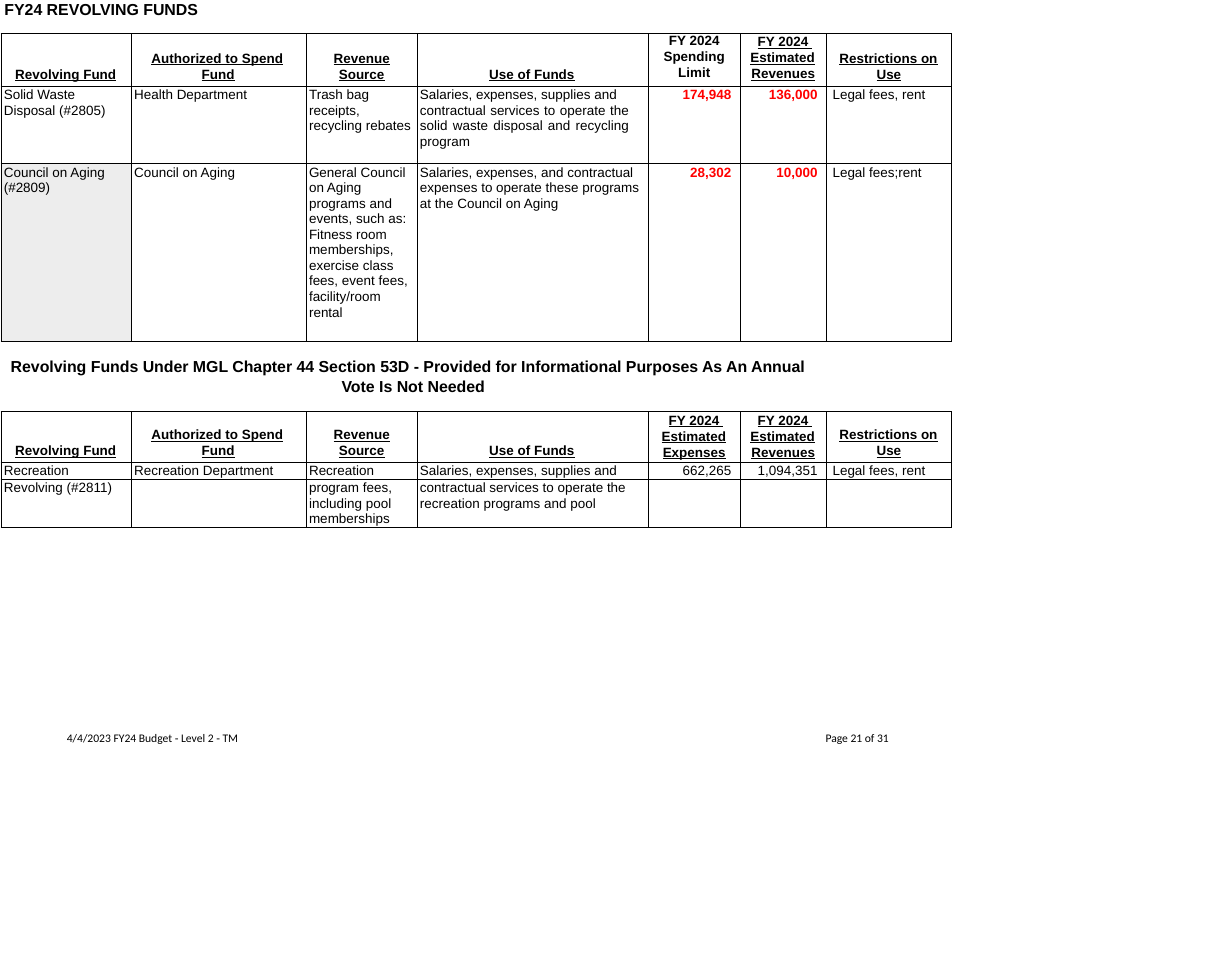
from dataclasses import dataclass, replace
from typing import Optional

from lxml import etree
from pptx import Presentation
from pptx import util as u
from pptx.dml import color
from pptx.enum import text
from pptx.oxml import ns

Cm, Pt = u.Cm, u.Pt
Align = text.PP_ALIGN


@dataclass(frozen=True)
class Theme:
    ink: str = "000000"
    red: str = "FF0000"
    gray: str = "EDEDED"
    sans: str = "Arial"
    foot: str = "Calibri"
    title: float = 13
    body: float = 11
    note: float = 9.5
    blank: float = 8


@dataclass(frozen=True)
class Para:
    words: str
    left: float = 0
    hang: float = 0
    right: float = 0
    lead: object = None
    align: Align = Align.LEFT
    bold: bool = False
    under: bool = False
    ink: str = Theme.ink
    size: float = Theme.body
    font: str = Theme.sans


@dataclass(frozen=True)
class Cell:
    paras: tuple = ()
    low: bool = False
    fill: Optional[str] = None


@dataclass(frozen=True)
class Grid:
    top: float
    rows: tuple
    ruled: tuple
    cells: list


@dataclass(frozen=True)
class Label:
    left: float
    top: float
    width: float
    height: float
    para: Para


COLS = (3.76, 5.05, 3.2, 6.68, 2.64, 2.49, 3.61)
LEFTS = (0.08, 0.08, 0.08, 0.08, 0, 0, 0.18)
RIGHTS = (0, 0, 0.13, 0.25, 0.25, 0.25, 0)
MONEY = (4, 5)


def write(frame, paras: tuple) -> None:
    for i, para in enumerate(paras):
        line = frame.paragraphs[0] if i == 0 else frame.add_paragraph()
        line.alignment = para.align
        if para.lead:
            line.line_spacing = para.lead
        props = line._p.get_or_add_pPr()
        for key, size in (("marL", para.left), ("marR", para.right), ("indent", para.hang)):
            props.set(key, str(int(Cm(size))))
        run = line.add_run()
        run.text = para.words
        font = run.font
        font.name, font.size = para.font, Pt(para.size)
        font.bold, font.underline = para.bold, para.under
        font.color.rgb = color.RGBColor.from_string(para.ink)


def rule(cell, sides: str) -> None:
    props = cell._tc.get_or_add_tcPr()
    for side in "LRTB":
        line = etree.SubElement(props, ns.qn("a:ln" + side), w=str(int(Pt(1))))
        if side in sides:
            fill = etree.SubElement(line, ns.qn("a:solidFill"))
            etree.SubElement(fill, ns.qn("a:srgbClr"), val=Theme.ink)
        else:
            etree.SubElement(line, ns.qn("a:noFill"))


def draw_grid(slide, grid: Grid) -> None:
    frame = slide.shapes.add_table(len(grid.rows), len(COLS), Cm(0.03), Cm(grid.top),
                                   Cm(sum(COLS)), Cm(sum(grid.rows)))
    table = frame.table
    table.first_row = table.horz_banding = False
    for col, width in zip(table.columns, COLS):
        col.width = Cm(width)
    for r, height in enumerate(grid.rows):
        table.rows[r].height = Cm(height)
        sides = "LR" + "T" * (r == 0 or r - 1 in grid.ruled) + "B" * (r in grid.ruled)
        for c, data in enumerate(grid.cells[r]):
            cell = table.cell(r, c)
            cell.margin_left = cell.margin_right = cell.margin_top = 0
            cell.margin_bottom = Cm(0.12 if data.low else 0)
            cell.vertical_anchor = text.MSO_ANCHOR.BOTTOM if data.low else text.MSO_ANCHOR.TOP
            rule(cell, sides)
            if data.fill:
                cell.fill.solid()
                cell.fill.fore_color.rgb = color.RGBColor.from_string(data.fill)
            else:
                cell.fill.background()
            write(cell.text_frame, data.paras)
            if not data.paras:
                etree.SubElement(cell.text_frame.paragraphs[0]._p, ns.qn("a:endParaRPr"),
                                 sz=str(int(Theme.blank * 100)))


def draw_label(slide, label: Label) -> None:
    box = slide.shapes.add_textbox(Cm(label.left), Cm(label.top), Cm(label.width), Cm(label.height))
    frame = box.text_frame
    frame.margin_left = frame.margin_right = frame.margin_top = frame.margin_bottom = 0
    frame.word_wrap = True
    frame.auto_size = text.MSO_AUTO_SIZE.SHAPE_TO_FIT_TEXT
    write(frame, (label.para,))


def head(words: str, left: float, hang: float = 0) -> Para:
    return Para(words, left, hang, lead=1.07, bold=True, under=True)


def heads(spend: Cell) -> list:
    names = (head("Revolving Fund", 0.41), head("Authorized to Spend Fund", 2.03, -1.45),
             head("Revenue Source", 0.94, -0.15), head("Use of Funds", 2.08))
    gain = Cell((head("FY 2024 ", 0.51), head("Estimated Revenues", 0.33, -0.03)))
    limit = Cell((head("Restrictions on Use", 1.45, -1.07),), low=True)
    return [Cell((name,), low=True) for name in names] + [spend, gain, limit]


def body(lead: float, *words: str) -> list:
    cells = []
    for c, entry in enumerate(words):
        base = Para("", LEFTS[c], right=RIGHTS[c],
                    align=Align.RIGHT if c in MONEY else Align.LEFT)
        parts = entry.split("\n") if entry else []
        cells.append(Cell(tuple(replace(base, words=part, lead=1.04 if i else Pt(lead))
                                for i, part in enumerate(parts))))
    return cells


def restyle(row: list, spots: tuple, **style) -> None:
    for c in spots:
        row[c] = replace(row[c], paras=tuple(replace(p, **style) for p in row[c].paras))


def main() -> None:
    deck = Presentation()
    deck.slide_width, deck.slide_height = Cm(35.56), Cm(27.94)
    slide = deck.slides.add_slide(deck.slide_layouts[6])

    waste = body(13.1, "Solid Waste\nDisposal (#2805)", "Health Department",
                 "Trash bag\nreceipts, recycling rebates",
                 "Salaries, expenses, supplies and\ncontractual services to operate the "
                 "solid waste disposal and recycling program",
                 "174,948", "136,000", "Legal fees, rent")
    aging = body(13.1, "Council on Aging\n(#2809)", "Council on Aging",
                 "General Council\non Aging programs and events, such as: Fitness room "
                 "memberships, exercise class fees, event fees, facility/room rental",
                 "Salaries, expenses, and contractual\nexpenses to operate these programs "
                 "at the Council on Aging",
                 "28,302", "10,000", "Legal fees;rent")
    for row in (waste, aging):
        restyle(row, MONEY, bold=True, ink=Theme.red)
    restyle(waste, (3,), align=Align.JUSTIFY, right=0.56)
    aging[0] = replace(aging[0], fill=Theme.gray)

    cap = Para("FY 2024", align=Align.CENTER, bold=True)
    spend = Cell((cap, replace(cap, words="Spending Limit", left=0.43, right=0.43, lead=1.07)))
    cost = Cell((head("FY 2024 ", 0.58), head("Estimated Expenses", 0.41, -0.03)))
    sport = [
        body(12.8, "Recreation", "Recreation Department", "Recreation",
             "Salaries, expenses, supplies and", "662,265", "1,094,351", "Legal fees, rent"),
        body(12.7, "Revolving (#2811)", "", "program fees,",
             "contractual services to operate the", "", "", ""),
        body(12.7, "", "", "including pool", "recreation programs and pool", "", "", ""),
        body(11.1, "", "", "memberships", "", "", "", ""),
    ]
    grids = (
        Grid(0.97, (1.52, 2.24, 5.13), (0, 1, 2), [heads(spend), waste, aging]),
        Grid(11.89, (1.47, 0.48, 0.48, 0.48, 0.43), (0, 1, 4), [heads(cost), *sport]),
    )
    note = Para("4/4/2023 FY24 Budget ‐ Level 2 ‐ TM", 0.03, lead=Pt(10.3),
                size=Theme.note, font=Theme.foot)
    title = Para("FY24 REVOLVING FUNDS", 0.03, bold=True, size=Theme.title)
    sub = replace(title, words="Revolving Funds Under MGL Chapter 44 Section 53D - Provided for "
                  "Informational Purposes As An Annual Vote Is Not Needed",
                  left=9.58, hang=-9.55, lead=1.05)
    labels = (
        Label(1.9, 21.13, 5.28, 0.41, note),
        Label(23.8, 21.13, 2.21, 0.41, replace(note, words="Page 21 of 31")),
        Label(0.1, 0, 5.74, 0.64, title),
        Label(0.28, 10.26, 23.37, 1.19, sub),
    )
    for grid in grids:
        draw_grid(slide, grid)
    for label in labels:
        draw_label(slide, label)
    deck.save("out.pptx")


if __name__ == "__main__":
    main()
